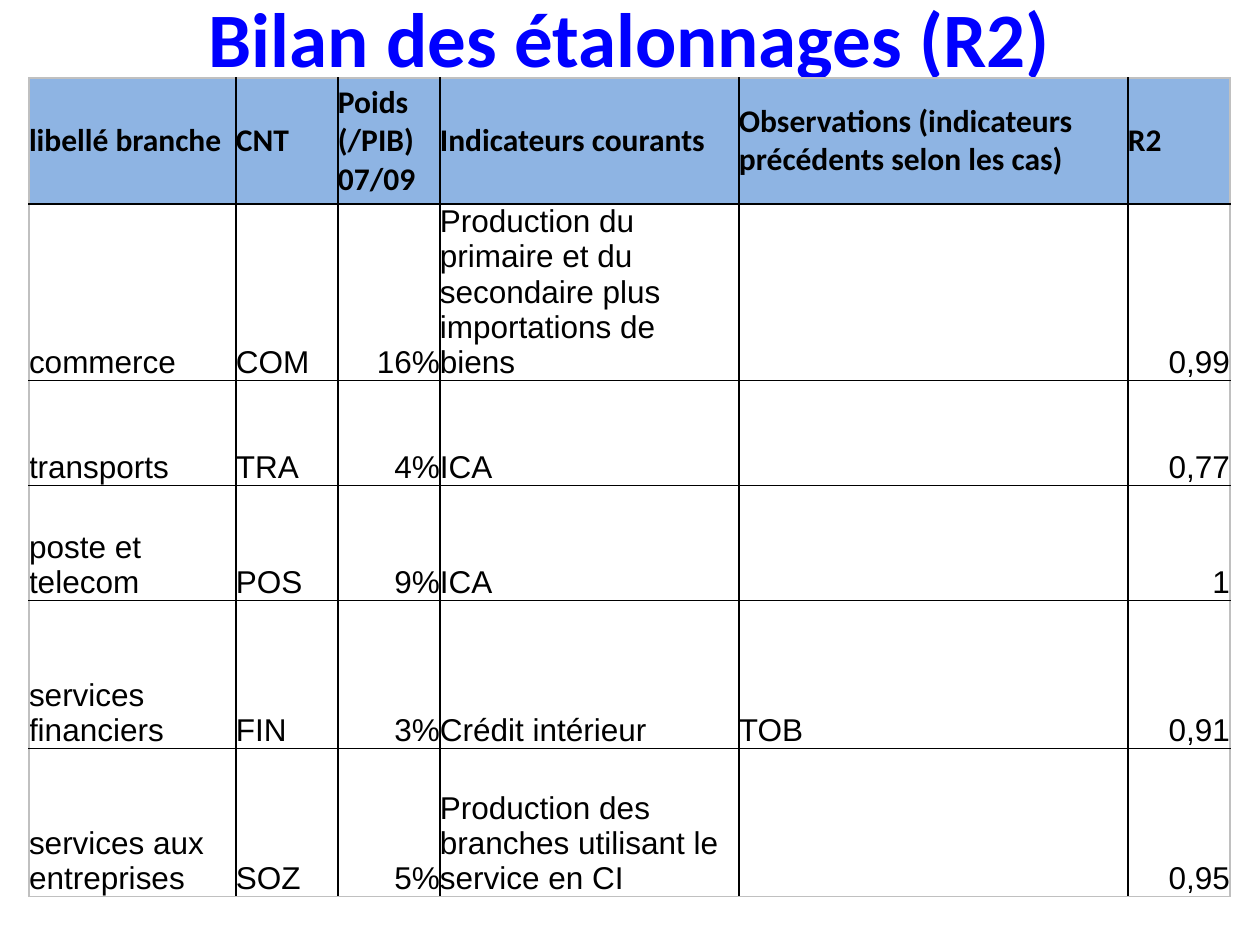
from lxml.etree import SubElement
from pptx import Presentation
from pptx.dml.color import RGBColor
from pptx.enum.text import MSO_ANCHOR as Anchor, PP_ALIGN as Align
from pptx.oxml.ns import qn
from pptx.util import Emu, Pt

PX_PER_INCH = 126
BLUE = RGBColor(0x00, 0x00, 0xFF)
BLACK = RGBColor(0x00, 0x00, 0x00)
GREY = RGBColor(0xC0, 0xC0, 0xC0)
HEADER_FILL = RGBColor(0x8E, 0xB4, 0xE3)

COLUMN_WIDTHS = [207, 102, 102, 299, 389, 102]
ROW_HEIGHTS = [126, 136, 105, 115, 148, 148]
NUMBER_COLUMNS = {2, 5}
ROWS = [
    ["libellé branche", "CNT", "Poids (/PIB) 07/09", "Indicateurs courants",
     "Observations (indicateurs précédents selon les cas)", "R2"],
    ["commerce", "COM", "16%",
     "Production du primaire et du secondaire plus importations de biens", "", "0,99"],
    ["transports", "TRA", "4%", "ICA", "", "0,77"],
    ["poste et telecom", "POS", "9%", "ICA", "", "1"],
    ["services financiers", "FIN", "3%", "Crédit intérieur", "TOB", "0,91"],
    ["services aux entreprises", "SOZ", "5%",
     "Production des branches utilisant le service en CI", "", "0,95"],
]


def px(length):
    return Emu(round(length * 914400 / PX_PER_INCH))


def format_text(para, font_name, size, color, bold, align):
    para.alignment = align
    for span in para.runs:
        font = span.font
        font.name, font.size, font.bold = font_name, Pt(size), bold
        font.color.rgb = color


def add_title(page, text):
    title = page.shapes.title
    title.left, title.top, title.width, title.height = map(px, (63, -42, 1134, 158))
    frame = title.text_frame
    frame.text = text
    frame.vertical_anchor = Anchor.MIDDLE
    format_text(frame.paragraphs[0], "Calibri", 44, BLUE, True, Align.CENTER)


def set_borders(cell, row, column):
    """Black lines between cells, grey ones around the table."""
    outer = {
        "a:lnL": column == 0,
        "a:lnR": column == len(COLUMN_WIDTHS) - 1,
        "a:lnT": row == 0,
        "a:lnB": row == len(ROW_HEIGHTS) - 1,
    }
    properties = cell._tc.get_or_add_tcPr()
    for tag, is_outer in outer.items():
        line = SubElement(properties, qn(tag), w=str(Pt(1)))
        fill = SubElement(line, qn("a:solidFill"))
        SubElement(fill, qn("a:srgbClr"), val=str(GREY if is_outer else BLACK))


def fill_cell(cell, row, column, text):
    is_header = row == 0
    cell.margin_left = cell.margin_right = cell.margin_top = cell.margin_bottom = 0
    cell.vertical_anchor = Anchor.MIDDLE if is_header else Anchor.BOTTOM
    set_borders(cell, row, column)
    if is_header:
        cell.fill.solid()
        cell.fill.fore_color.rgb = HEADER_FILL
    else:
        cell.fill.background()
    cell.text_frame.text = text
    is_number = column in NUMBER_COLUMNS and not is_header
    format_text(cell.text_frame.paragraphs[0], "Calibri" if is_header else "Arial",
                18, BLACK, is_header, Align.RIGHT if is_number else Align.LEFT)


def add_results_table(page):
    table = page.shapes.add_table(
        len(ROWS), len(COLUMN_WIDTHS), px(29), px(78),
        px(sum(COLUMN_WIDTHS)), px(sum(ROW_HEIGHTS))).table
    table.horz_banding = False
    for column, width in zip(table.columns, COLUMN_WIDTHS):
        column.width = px(width)
    for row, height in zip(table.rows, ROW_HEIGHTS):
        row.height = px(height)
    for row, texts in enumerate(ROWS):
        for column, text in enumerate(texts):
            fill_cell(table.cell(row, column), row, column, text)


def main():
    deck = Presentation()
    deck.slide_width, deck.slide_height = px(1260), px(945)
    page = deck.slides.add_slide(deck.slide_layouts[5])
    # Title, then the table that overlaps its lower edge
    add_title(page, "Bilan des étalonnages (R2)")
    add_results_table(page)
    deck.save("out.pptx")


if __name__ == "__main__":
    main()
